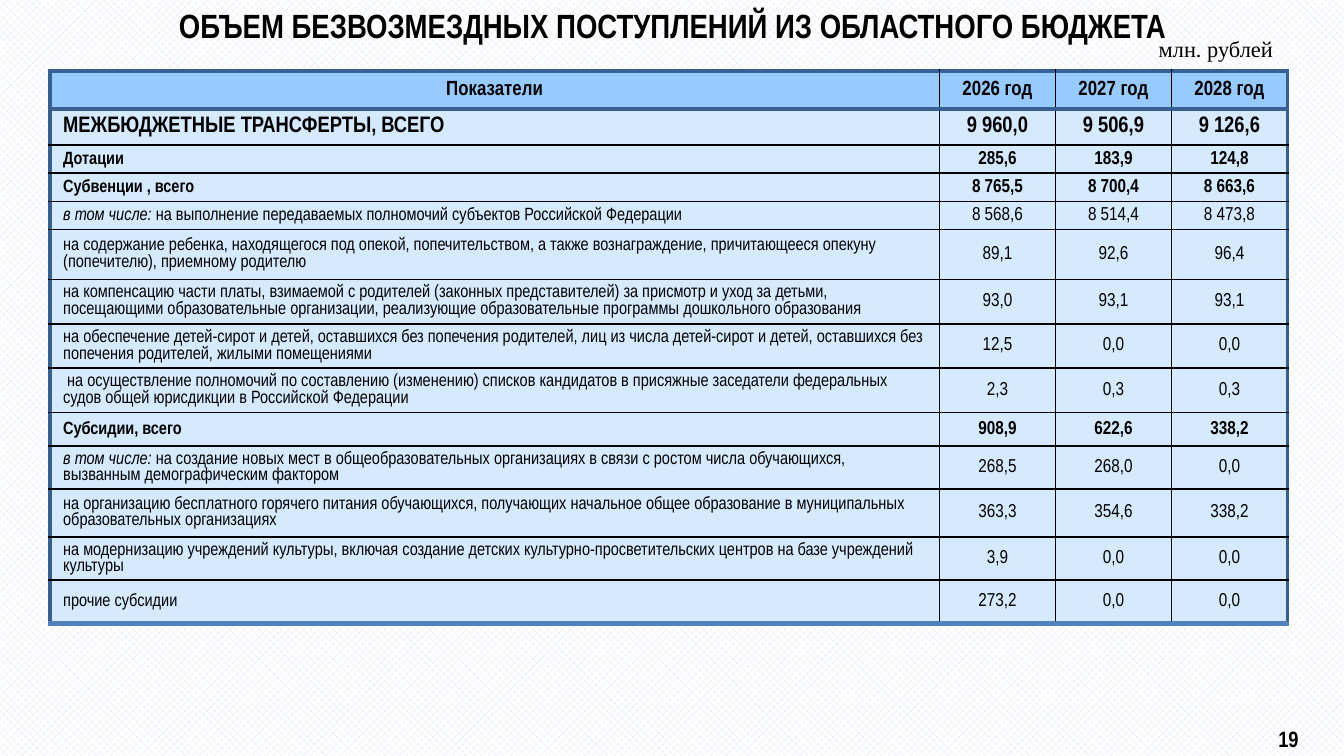
from lxml.etree import SubElement
from pptx import Presentation
from pptx.dml.color import RGBColor
from pptx.enum.dml import MSO_PATTERN
from pptx.enum.text import MSO_ANCHOR as ANCHOR, PP_ALIGN as ALIGN
from pptx.oxml.ns import qn
from pptx.util import Inches, Pt

BLACK = RGBColor(0x00, 0x00, 0x00)
WHITE = RGBColor(0xFF, 0xFF, 0xFF)
PALE = RGBColor(0xDC, 0xE6, 0xF2)
HEAD = RGBColor(0x97, 0xCB, 0xFF)
BODY = RGBColor(0xD5, 0xEA, 0xFF)
FRAME = RGBColor(0x37, 0x60, 0x92)
BASE = RGBColor(0x4F, 0x81, 0xBD)
NARROW = "Arial Narrow"
INCL = "в том числе: "

prs = Presentation()
prs.slide_width = Inches(10)
prs.slide_height = prs.slide_width * 9 // 16
U = prs.slide_width // 1000
s = prs.slides.add_slide(prs.slide_layouts[6])
bg = s.background.fill
bg.patterned()
bg.pattern = MSO_PATTERN.LARGE_CHECKER_BOARD
bg.fore_color.rgb, bg.back_color.rgb = PALE, WHITE


def add_run(p, text, **fmt):
    r = p.add_run()
    r.text = text
    r.font.color.rgb = BLACK
    for key, value in fmt.items():
        setattr(r.font, key, value)


def add_border(cell, side, color, width):
    ln = SubElement(cell._tc.get_or_add_tcPr(), qn(f"a:ln{side}"), w=str(Pt(width)))
    fill = SubElement(ln, qn("a:solidFill"))
    SubElement(fill, qn("a:srgbClr"), val=str(color))


rows = [
    (28, "Показатели", "2026 год", "2027 год", "2028 год"),
    (27, "МЕЖБЮДЖЕТНЫЕ ТРАНСФЕРТЫ, ВСЕГО", "9 960,0", "9 506,9", "9 126,6"),
    (21, "Дотации", "285,6", "183,9", "124,8"),
    (21, "Субвенции , всего", "8 765,5", "8 700,4", "8 663,6"),
    (21, INCL + "на выполнение передаваемых полномочий субъектов Российской Федерации",
     "8 568,6", "8 514,4", "8 473,8"),
    (37, "на содержание ребенка, находящегося под опекой, попечительством, а также "
     "вознаграждение, причитающееся опекуну (попечителю), приемному родителю",
     "89,1", "92,6", "96,4"),
    (23, "на компенсацию части платы, взимаемой с родителей (законных представителей) "
     "за присмотр и уход за детьми, посещающими образовательные организации, "
     "реализующие образовательные программы дошкольного образования",
     "93,0", "93,1", "93,1"),
    (23, "на обеспечение детей-сирот и детей, оставшихся без попечения родителей, "
     "лиц из числа детей-сирот и детей, оставшихся без попечения родителей, "
     "жилыми помещениями", "12,5", "0,0", "0,0"),
    (23, " на осуществление полномочий по составлению (изменению) списков кандидатов "
     "в присяжные заседатели федеральных судов общей юрисдикции в Российской Федерации",
     "2,3", "0,3", "0,3"),
    (25, "Субсидии, всего", "908,9", "622,6", "338,2"),
    (26, INCL + "на создание новых мест в общеобразовательных организациях в связи с "
     "ростом числа обучающихся, вызванным демографическим фактором",
     "268,5", "268,0", "0,0"),
    (36, "на организацию бесплатного горячего питания обучающихся, получающих начальное "
     "общее образование в муниципальных образовательных организациях",
     "363,3", "354,6", "338,2"),
    (32, "на модернизацию учреждений культуры, включая создание детских "
     "культурно-просветительских центров на базе учреждений культуры",
     "3,9", "0,0", "0,0"),
    (32, "прочие субсидии", "273,2", "0,0", "0,0"),
]
bold_rows = {0, 1, 2, 3, 9}
single_spaced = {5, 6, 7, 8}
last = len(rows) - 1

frame = s.shapes.add_table(len(rows), 4, 37 * U, 53 * U, 921 * U, 451 * U)
table = frame.table
label_width = 662 * U
year_width = (921 * U - label_width) // 3
for col, width in zip(table.columns, [label_width] + [year_width] * 3):
    col.width = width

for i, (height, *texts) in enumerate(rows):
    table.rows[i].height = height * U
    for j, text in enumerate(texts):
        cell = table.cell(i, j)
        cell.vertical_anchor = ANCHOR.MIDDLE
        cell.margin_left = cell.margin_right = 10 * U
        cell.margin_top = cell.margin_bottom = 4 * U
        thin, thick = (BLACK, 1), (FRAME, 2.25)
        add_border(cell, "L", *(thick if j == 0 else thin))
        add_border(cell, "R", *(thick if j == 3 else thin))
        add_border(cell, "T", *(thick if i < 2 else thin))
        add_border(cell, "B", *((BASE, 3) if i == last else thick if i == 0 else thin))
        cell.fill.solid()
        cell.fill.fore_color.rgb = BODY if i else HEAD
        p = cell.text_frame.paragraphs[0]
        p.alignment = ALIGN.CENTER if j or not i else ALIGN.LEFT
        if j or i not in single_spaced:
            p.line_spacing = 0.95
        size = {0: 11, 1: 12}.get(i, 10 if j else 9.5)
        fmt = {"name": NARROW, "size": Pt(size), "bold": i in bold_rows}
        if text.startswith(INCL):
            add_run(p, INCL, italic=True, **fmt)
            text = text.removeprefix(INCL)
        add_run(p, text, italic=False, **fmt)
frame.height = 451 * U

labels = [
    ("ОБЪЕМ БЕЗВОЗМЕЗДНЫХ ПОСТУПЛЕНИЙ ИЗ ОБЛАСТНОГО БЮДЖЕТА", (51, 10, 899, 47),
     ALIGN.CENTER, ANCHOR.MIDDLE, (0, 30), {"name": NARROW, "size": Pt(18), "bold": True}),
    ("млн. рублей", (846, 24, 111, 24),
     ALIGN.RIGHT, ANCHOR.MIDDLE, (5, 5), {"name": "Times New Roman", "size": Pt(12)}),
    ("19", (909, 535, 67, 26),
     ALIGN.RIGHT, ANCHOR.TOP, (5, 5), {"name": NARROW, "size": Pt(11.9), "bold": True}),
]
for text, box, align, anchor, (top, bottom), fmt in labels:
    tf = s.shapes.add_textbox(*(v * U for v in box)).text_frame
    tf.word_wrap = True
    tf.vertical_anchor = anchor
    tf.margin_top, tf.margin_bottom = top * U, bottom * U
    p = tf.paragraphs[0]
    p.alignment = align
    add_run(p, text, **fmt)

prs.save("out.pptx")
